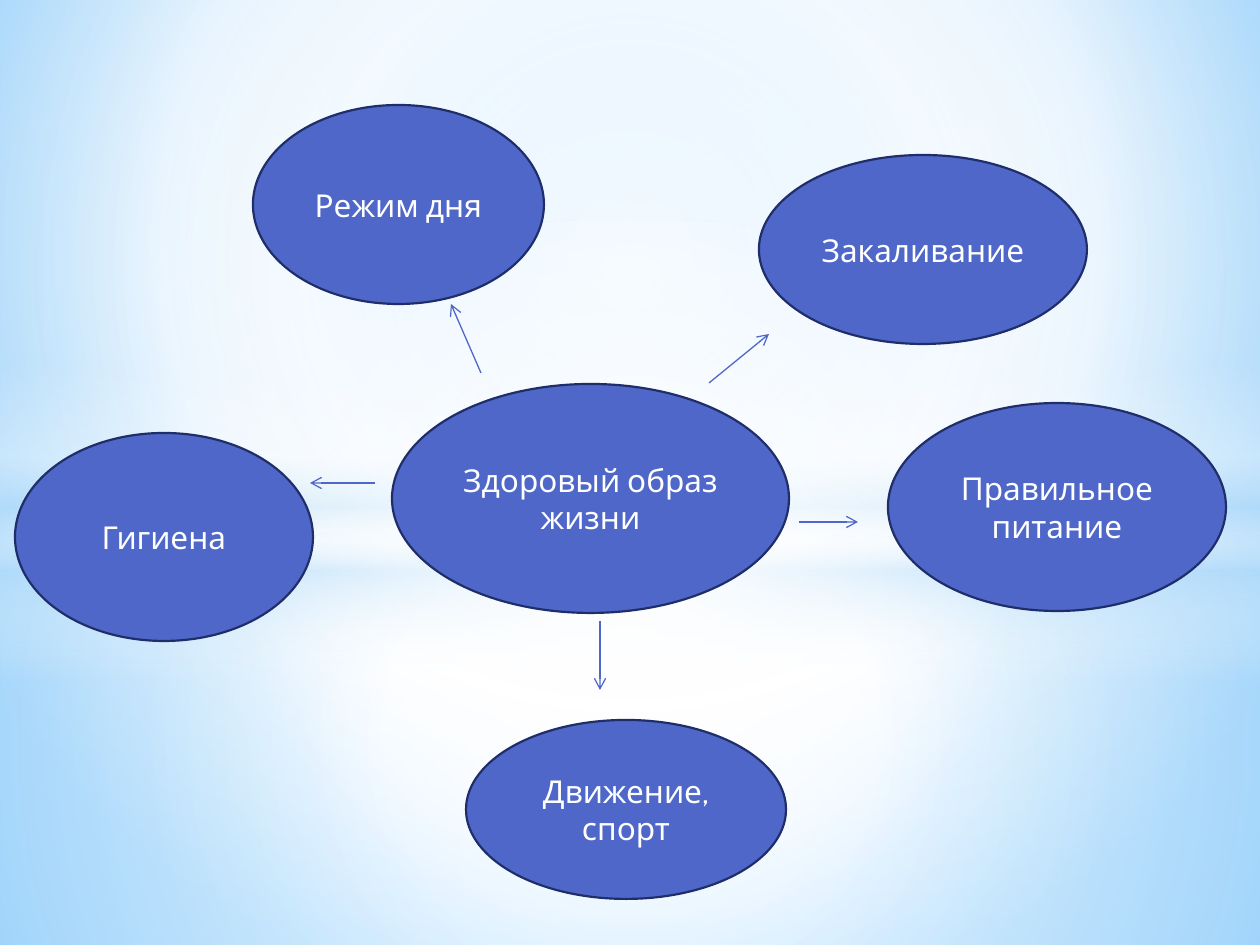
import pptx
import pptx.util
import pptx.dml.color
import pptx.enum.shapes
import pptx.enum.text
import pptx.oxml
import pptx.oxml.ns
from dataclasses import dataclass

SCALE = 914400 / 126
WIDTH, HEIGHT = 1260, 945
KIND = pptx.enum.shapes.MSO_SHAPE
qn = pptx.oxml.ns.qn


@dataclass(frozen=True)
class Theme:
    fill: str = "4E67C8"
    edge: str = "1F2E69"
    text: str = "FFFFFF"
    white: str = "FFFFFF"
    sky: str = "B4DCFA"
    light: str = "9ED5FF"
    deep: str = "5BB9FF"
    font: str = "Cabin"
    size: float = 18
    border: float = 1.25
    arrow: float = 0.75


THEME = Theme()
CENTER = (50, 50, 50, 50)


def px(value):
    return pptx.util.Emu(round(value * SCALE))


def rgb(code):
    return pptx.dml.color.RGBColor.from_string(code)


def paint(fill, root, stops, focus=None):
    """Fill with (position, colour, opacity) stops, round a focus or downwards."""
    fill.gradient()
    grad = root.find(".//" + qn("a:gradFill"))
    for child in list(grad):
        grad.remove(child)

    def add(parent, tag, **attrs):
        node = parent.makeelement(qn(tag), {k: str(v) for k, v in attrs.items()})
        parent.append(node)
        return node

    group = add(grad, "a:gsLst")
    for place, code, alpha in stops:
        stop = add(group, "a:gs", pos=place * 1000)
        color = add(stop, "a:srgbClr", val=code)
        if alpha < 100:
            add(color, "a:alpha", val=alpha * 1000)
    if focus:
        way = add(grad, "a:path", path="circle")
        add(way, "a:fillToRect", **{k: v * 1000 for k, v in zip("ltrb", focus)})
    else:
        add(grad, "a:lin", ang=90 * 60000, scaled=0)


def add_shape(slide, kind, box):
    shape = slide.shapes.add_shape(kind, *map(px, box))
    shape.shadow.inherit = False
    return shape


def add_glow(slide, kind, box, stops, focus=None):
    shape = add_shape(slide, kind, box)
    shape.line.fill.background()
    paint(shape.fill, shape._element, stops, focus)


def add_topic(slide, text, box):
    shape = add_shape(slide, KIND.OVAL, box)
    shape.fill.solid()
    shape.fill.fore_color.rgb = rgb(THEME.fill)
    shape.line.color.rgb = rgb(THEME.edge)
    shape.line.width = pptx.util.Pt(THEME.border)
    frame = shape.text_frame
    frame.word_wrap = True
    frame.vertical_anchor = pptx.enum.text.MSO_ANCHOR.MIDDLE
    para = frame.paragraphs[0]
    para.text = text
    para.alignment = pptx.enum.text.PP_ALIGN.CENTER
    para.font.name = THEME.font
    para.font.size = pptx.util.Pt(THEME.size)
    para.font.color.rgb = rgb(THEME.text)


def add_arrow(slide, ends):
    kind = pptx.enum.shapes.MSO_CONNECTOR.STRAIGHT
    arrow = slide.shapes.add_connector(kind, *map(px, ends))
    arrow.line.color.rgb = rgb(THEME.fill)
    arrow.line.width = pptx.util.Pt(THEME.arrow)
    line = arrow.line._get_or_add_ln()
    line.append(line.makeelement(qn("a:tailEnd"), {"type": "arrow"}))
    props = arrow._element.spPr
    props.append(props.makeelement(qn("a:effectLst"), {}))


def add_back(slide):
    white, sky = THEME.white, THEME.sky
    paint(slide.background.fill, slide._element,
          [(0, THEME.light, 100), (60, white, 100), (100, THEME.deep, 100)],
          (20, 10, 20, 60))
    split = 533
    add_glow(slide, KIND.RECTANGLE, (0, split, WIDTH, HEIGHT - split),
             [(0, white, 91), (37, white, 76), (100, sky, 79)], CENTER)
    add_glow(slide, KIND.RECTANGLE, (0, 0, WIDTH, split),
             [(0, white, 89), (48, white, 62), (100, sky, 79)], CENTER)
    add_glow(slide, KIND.RECTANGLE, (0, 365, WIDTH, 315),
             [(0, white, 0), (29, white, 30), (45, sky, 40),
              (55, white, 26), (65, sky, 60), (100, white, 0)])
    add_glow(slide, KIND.OVAL, (0, 220, WIDTH, 703),
             [(0, white, 100), (54, white, 0)], CENTER)


def main():
    deck = pptx.Presentation()
    deck.slide_width, deck.slide_height = px(WIDTH), px(HEIGHT)
    slide = deck.slides.add_slide(deck.slide_layouts[6])
    add_back(slide)
    topics = [
        ("Здоровый образ жизни", (392, 384, 397, 229)),
        ("Режим дня", (253, 105, 291, 199)),
        ("Закаливание", (759, 155, 328, 189)),
        ("Гигиена", (15, 433, 298, 208)),
        ("Правильное питание", (888, 403, 338, 208)),
        ("Движение, спорт", (466, 720, 320, 179)),
    ]
    for text, box in topics:
        add_topic(slide, text, box)
    arrows = [
        (709, 383, 769, 334),
        (481, 373, 451, 304),
        (799, 522, 858, 522),
        (600, 621, 600, 690),
        (375, 483, 310, 483),
    ]
    for ends in arrows:
        add_arrow(slide, ends)
    deck.save("out.pptx")


if __name__ == "__main__":
    main()
